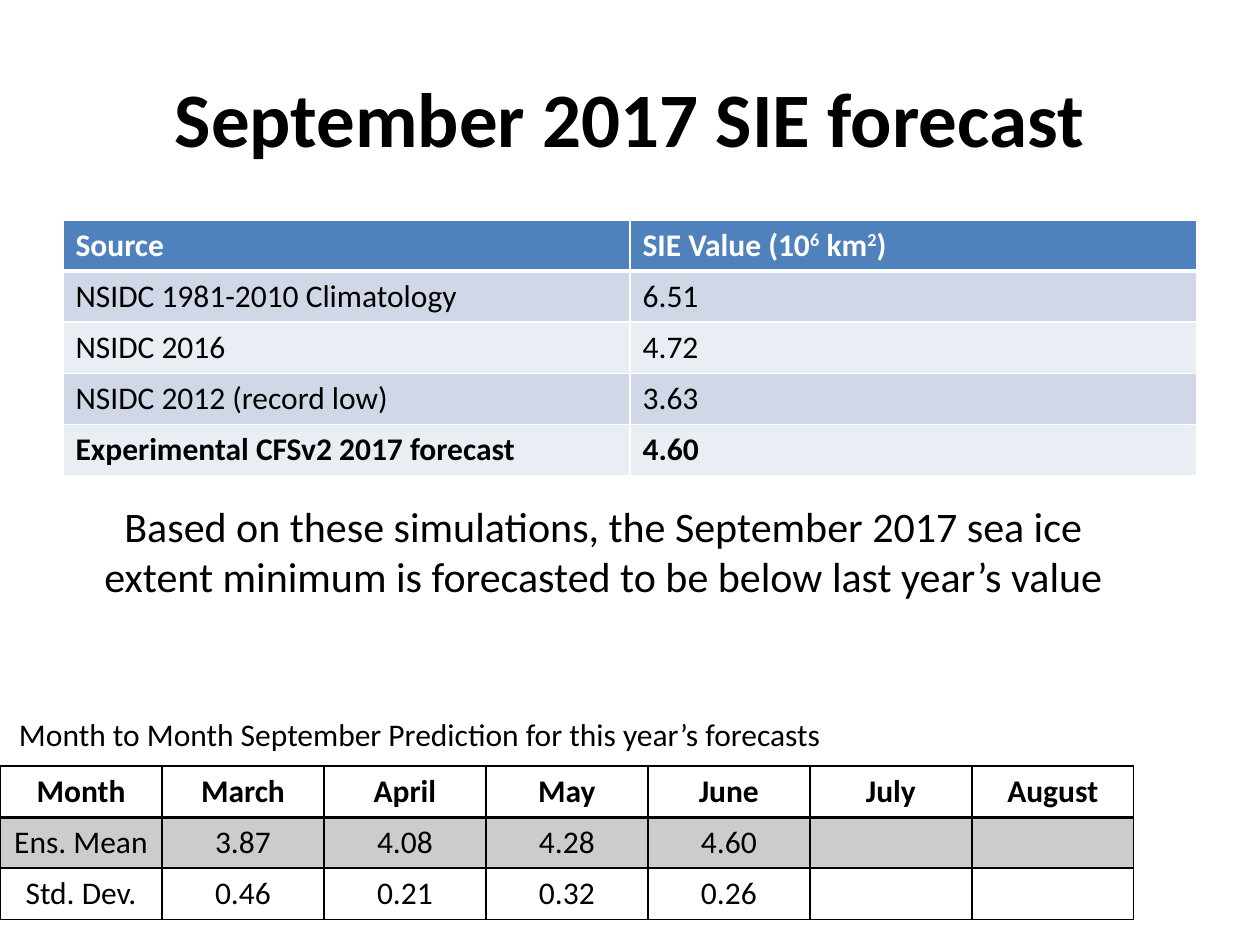
"""Build the September 2017 sea ice extent forecast slide."""
from lxml.etree import SubElement
from pptx import Presentation
from pptx.dml.color import RGBColor
from pptx.enum.text import MSO_ANCHOR, MSO_AUTO_SIZE, PP_ALIGN
from pptx.oxml import parse_xml
from pptx.oxml.ns import nsdecls, qn
from pptx.util import Emu, Pt

PX_PER_INCH = 126
BLACK, WHITE = "000000", "FFFFFF"
BLUE, BAND_DARK, BAND_LIGHT = "4F81BD", "D0D8E8", "E9EDF4"
ROW_HEIGHT = 51

SOURCES = [
    ["Source", "SIE Value (10^6^ km^2^)"],
    ["NSIDC 1981-2010 Climatology", "6.51"],
    ["NSIDC 2016", "4.72"],
    ["NSIDC 2012 (record low)", "3.63"],
    ["Experimental CFSv2 2017 forecast", "4.60"],
]
MONTHS = [
    ["Month", "March", "April", "May", "June", "July", "August"],
    ["Ens. Mean", "3.87", "4.08", "4.28", "4.60", "", ""],
    ["Std. Dev.", "0.46", "0.21", "0.32", "0.26", "", ""],
]


def px(length):
    return Emu(round(length * 914400 / PX_PER_INCH))


def rgb(color):
    return RGBColor.from_string(color)


class SlideBuilder:
    font = "Calibri"

    def __init__(self, presentation):
        self.slide = presentation.slides.add_slide(presentation.slide_layouts[6])

    def add_runs(self, paragraph, text, size, color=BLACK, bold=False, align=PP_ALIGN.CENTER):
        paragraph.alignment = align
        paragraph.font.size = Pt(size)
        for index, part in enumerate(text.split("^")):
            if not part:
                continue
            run = paragraph.add_run()
            run.text = part
            run.font.name, run.font.size, run.font.bold = self.font, Pt(size), bold
            run.font.color.rgb = rgb(color)
            if index % 2:
                run.font._element.set("baseline", "30000")

    def text(self, left, top, width, height, text, size, bold=False, anchor=MSO_ANCHOR.TOP):
        shape = self.slide.shapes.add_textbox(px(left), px(top), px(width), px(height))
        frame = shape.text_frame
        frame.word_wrap = True
        frame.auto_size = MSO_AUTO_SIZE.NONE
        frame.vertical_anchor = anchor
        self.add_runs(frame.paragraphs[0], text, size, bold=bold)

    def fill(self, cell, color, alpha):
        if color is None:
            cell.fill.background()
            return
        cell.fill.solid()
        cell.fill.fore_color.rgb = rgb(color)
        if alpha < 100:
            color_element = next(cell._tc.tcPr.iter(qn("a:srgbClr")))
            SubElement(color_element, qn("a:alpha"), val=str(alpha * 1000))

    def border(self, cell, color, top, bottom):
        sides = [("L", 1), ("R", 1), ("T", top), ("B", bottom)]
        for index, (side, width) in enumerate(sides):
            line = parse_xml(
                f'<a:ln{side} {nsdecls("a")} w="{Pt(width)}"><a:solidFill>'
                f'<a:srgbClr val="{color}"/></a:solidFill></a:ln{side}>'
            )
            cell._tc.tcPr.insert(index, line)

    def table(self, left, top, column_width, rows, fills, line_color, header_line,
              header_color, bold_rows, align, alpha=100):
        columns = len(rows[0])
        frame = self.slide.shapes.add_table(
            len(rows), columns, px(left), px(top),
            px(column_width * columns), px(ROW_HEIGHT * len(rows)))
        table = frame.table
        table.first_row = table.horz_banding = False
        for column in table.columns:
            column.width = px(column_width)
        for row, values in enumerate(rows):
            for column, value in enumerate(values):
                cell = table.cell(row, column)
                color = header_color if row == 0 else BLACK
                self.add_runs(cell.text_frame.paragraphs[0], value, 18, color,
                              row in bold_rows, align)
                self.fill(cell, fills[row], alpha)
                self.border(cell, line_color, header_line if row == 1 else 1,
                            header_line if row == 0 else 1)


def main():
    presentation = Presentation()
    presentation.slide_width, presentation.slide_height = px(1260), px(945)
    builder = SlideBuilder(presentation)
    builder.text(63, 38, 1134, 157, "September 2017 SIE forecast", 44, True, MSO_ANCHOR.MIDDLE)
    builder.table(63, 220, 567, SOURCES,
                  [BLUE, BAND_DARK, BAND_LIGHT, BAND_DARK, BAND_LIGHT],
                  WHITE, 3, WHITE, (0, 4), PP_ALIGN.LEFT)
    builder.text(73, 494, 1061, 115,
                 "Based on these simulations, the September 2017 sea ice extent minimum "
                 "is forecasted to be below last year’s value", 24)
    builder.table(0, 766, 162, MONTHS, [None, BLACK, None],
                  BLACK, 2, BLACK, (0,), PP_ALIGN.CENTER, alpha=20)
    builder.text(0, 709, 840, 50,
                 "Month to Month September Prediction for this year’s forecasts", 18)
    presentation.save("out.pptx")


if __name__ == "__main__":
    main()
